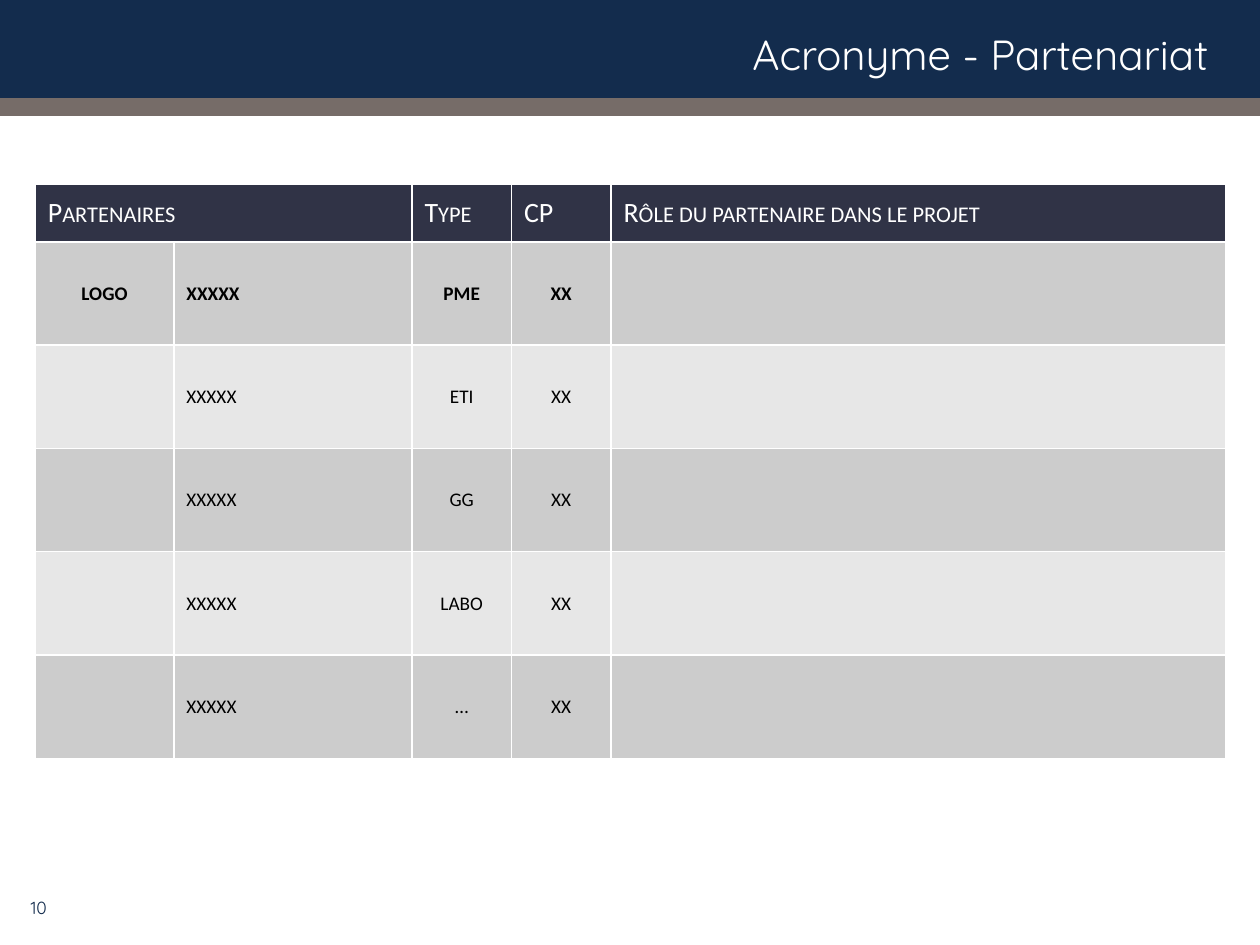
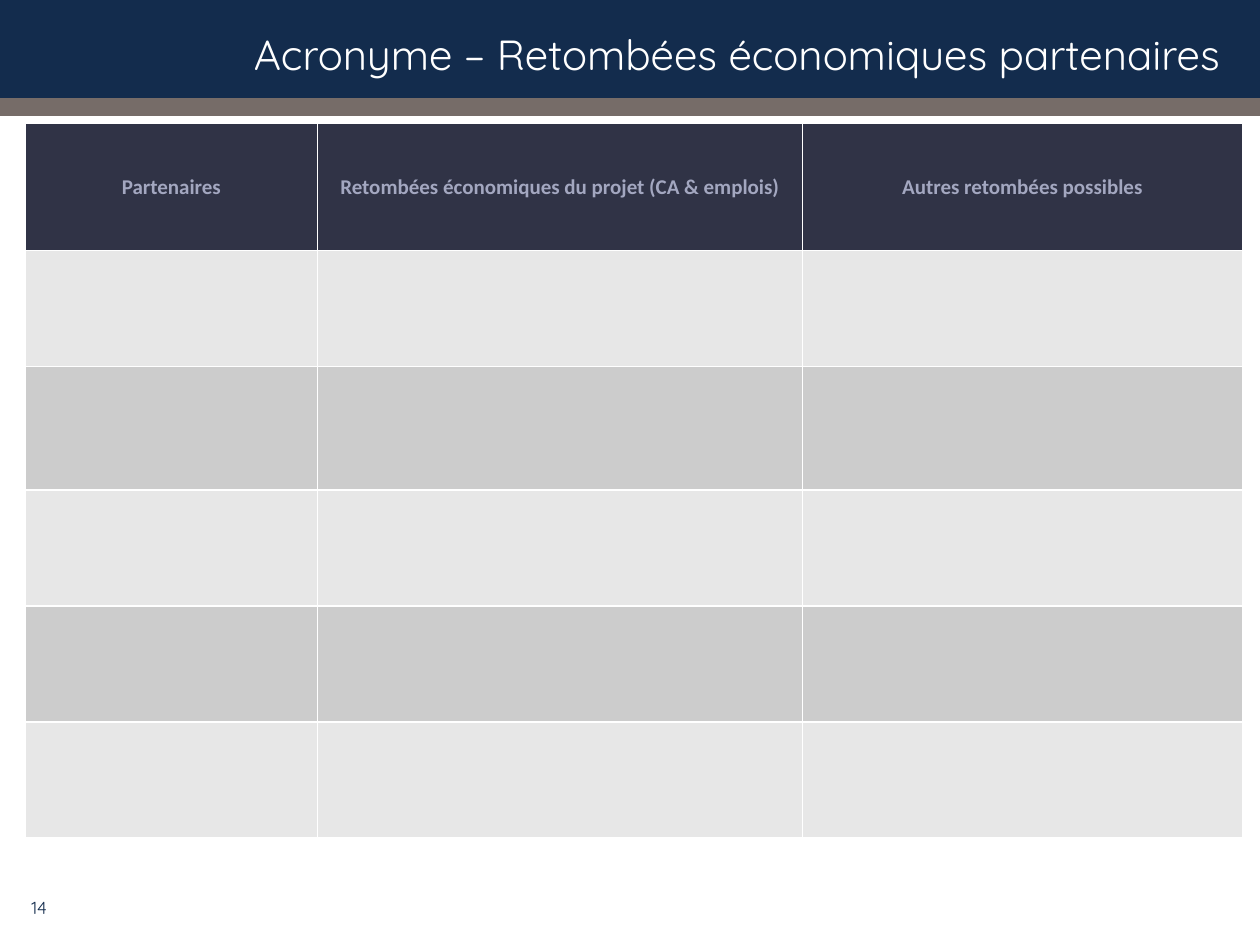
import lxml.etree
import pptx
import pptx.dml.color
import pptx.enum.shapes
import pptx.enum.text
import pptx.oxml.ns
import pptx.util

WIDTH, HEIGHT = 10, 7.5
NAVY, TAUPE, SLATE, WHITE, BLACK = "132C4D", "766C68", "303346", "FFFFFF", "000000"
LAVENDER, DARK_GREY, LIGHT_GREY = "A3A7C0", "CCCCCC", "E7E7E7"
BANDS = [(0, 0.9, NAVY), (0.78, 0.14, TAUPE)]
TITLE_BOX = (0.15, 0.14, 9.63, 0.58)
NUMBER_BOX = (0, 7, 0.47, 0.4)
BORDER_POINTS = 1
ALIGNMENTS = {
    "l": pptx.enum.text.PP_ALIGN.LEFT,
    "c": pptx.enum.text.PP_ALIGN.CENTER,
    "r": pptx.enum.text.PP_ALIGN.RIGHT,
}
MIDDLE = pptx.enum.text.MSO_ANCHOR.MIDDLE

TITLE_FORMAT = {"name": "Quicksand", "size": 24, "bold": False, "color": WHITE}
NUMBER_FORMAT = {"name": "Quicksand", "size": 10, "bold": False, "color": NAVY}
BODY_FORMAT = {"name": "Calibri", "size": 11, "bold": False, "color": BLACK}
LEADER_FORMAT = BODY_FORMAT | {"bold": True}

SLIDES = [
    {
        "title": "Acronyme - Partenariat ",
        "number": "10",
        "position": (0.28, 1.46),
        "columns": [1.1, 1.89, 0.79, 0.79, 4.88],
        "row_heights": [0.46] + [0.82] * 5,
        "rows": [
            ["Partenaires", "", "Type", "CP", "Rôle du partenaire dans le projet"],
            ["LOGO", "XXXXX", "PME", "XX", ""],
            ["", "XXXXX", "ETI", "XX", ""],
            ["", "XXXXX", "GG", "XX", ""],
            ["", "XXXXX", "LABO", "XX", ""],
            ["", "XXXXX", "…", "XX", ""],
        ],
        "header_span": 2,
        "header_alignments": "lllll",
        "body_alignments": "clccl",
        "header_format": {"name": "Calibri", "size": 16, "bold": False, "color": WHITE},
        "small_caps": True,
        "leader_rows": [1],
        "stripes": [DARK_GREY, LIGHT_GREY],
    },
    {
        "title": "Acronyme – Retombées économiques partenaires",
        "number": "14",
        "position": (0.2, 0.98),
        "columns": [2.32, 3.85, 3.49],
        "row_heights": [1.01, 0.92, 0.98, 0.92, 0.92, 0.92],
        "rows": [
            ["Partenaires", "Retombées économiques du projet (CA & emplois)", "Autres retombées possibles"],
        ] + [["", "", ""]] * 5,
        "header_span": 1,
        "header_alignments": "ccc",
        "body_alignments": "ccc",
        "header_format": {"name": "Calibri", "size": 12, "bold": True, "color": LAVENDER},
        "small_caps": False,
        "leader_rows": [],
        "stripes": [LIGHT_GREY, DARK_GREY],
    },
]


def rgb(value):
    return pptx.dml.color.RGBColor.from_string(value)


def inches(lengths):
    return [pptx.util.Inches(length) for length in lengths]


def fill_with(target, color):
    target.fill.solid()
    target.fill.fore_color.rgb = rgb(color)


def write(text_frame, text, alignment, text_format):
    paragraph = text_frame.paragraphs[0]
    paragraph.alignment = ALIGNMENTS[alignment]
    run = paragraph.add_run()
    run.text = text
    values = dict(text_format)
    run.font.color.rgb = rgb(values.pop("color"))
    values["size"] = pptx.util.Pt(values["size"])
    for attribute, value in values.items():
        setattr(run.font, attribute, value)
    return run


def set_borders(cell):
    properties = cell._tc.get_or_add_tcPr()
    for index, side in enumerate(("lnL", "lnR", "lnT", "lnB")):
        line = lxml.etree.Element(pptx.oxml.ns.qn(f"a:{side}"), w=str(pptx.util.Pt(BORDER_POINTS)))
        fill = lxml.etree.SubElement(line, pptx.oxml.ns.qn("a:solidFill"))
        lxml.etree.SubElement(fill, pptx.oxml.ns.qn("a:srgbClr"), val=WHITE)
        properties.insert(index, line)


def add_frame(slide, content):
    title = slide.shapes.title
    for top, height, color in BANDS:
        band = slide.shapes.add_shape(
            pptx.enum.shapes.MSO_SHAPE.RECTANGLE, *inches((0, top, WIDTH, height))
        )
        band.shadow.inherit = False
        band.line.fill.background()
        fill_with(band, color)
        title.element.addprevious(band.element)
    title.left, title.top, title.width, title.height = inches(TITLE_BOX)
    number = slide.shapes.add_textbox(*inches(NUMBER_BOX))
    for shape, text, text_format in (
        (title, content["title"], TITLE_FORMAT),
        (number, content["number"], NUMBER_FORMAT),
    ):
        shape.text_frame.word_wrap = True
        shape.text_frame.vertical_anchor = MIDDLE
        write(shape.text_frame, text, "r", text_format)


def add_partner_table(slide, content):
    rows, columns, heights = content["rows"], content["columns"], content["row_heights"]
    size = (sum(columns), sum(heights))
    table = slide.shapes.add_table(
        len(rows), len(columns), *inches(content["position"] + size)
    ).table
    for column, width in zip(table.columns, inches(columns)):
        column.width = width
    for row, height in zip(table.rows, inches(heights)):
        row.height = height
    if content["header_span"] > 1:
        table.cell(0, 0).merge(table.cell(0, content["header_span"] - 1))

    for row_index, texts in enumerate(rows):
        is_header = row_index == 0
        if is_header:
            color, text_format = SLATE, content["header_format"]
            alignments = content["header_alignments"]
        else:
            color = content["stripes"][(row_index - 1) % 2]
            text_format = LEADER_FORMAT if row_index in content["leader_rows"] else BODY_FORMAT
            alignments = content["body_alignments"]
        for column_index, (text, alignment) in enumerate(zip(texts, alignments)):
            cell = table.cell(row_index, column_index)
            cell.vertical_anchor = MIDDLE
            fill_with(cell, color)
            set_borders(cell)
            if text:
                run = write(cell.text_frame, text, alignment, text_format)
                if is_header and content["small_caps"]:
                    run._r.get_or_add_rPr().set("cap", "small")


def main():
    presentation = pptx.Presentation()
    presentation.slide_width, presentation.slide_height = inches((WIDTH, HEIGHT))
    title_only = presentation.slide_layouts.get_by_name("Title Only")
    for content in SLIDES:
        slide = presentation.slides.add_slide(title_only)
        add_frame(slide, content)
        add_partner_table(slide, content)
    presentation.save("out.pptx")


if __name__ == "__main__":
    main()
